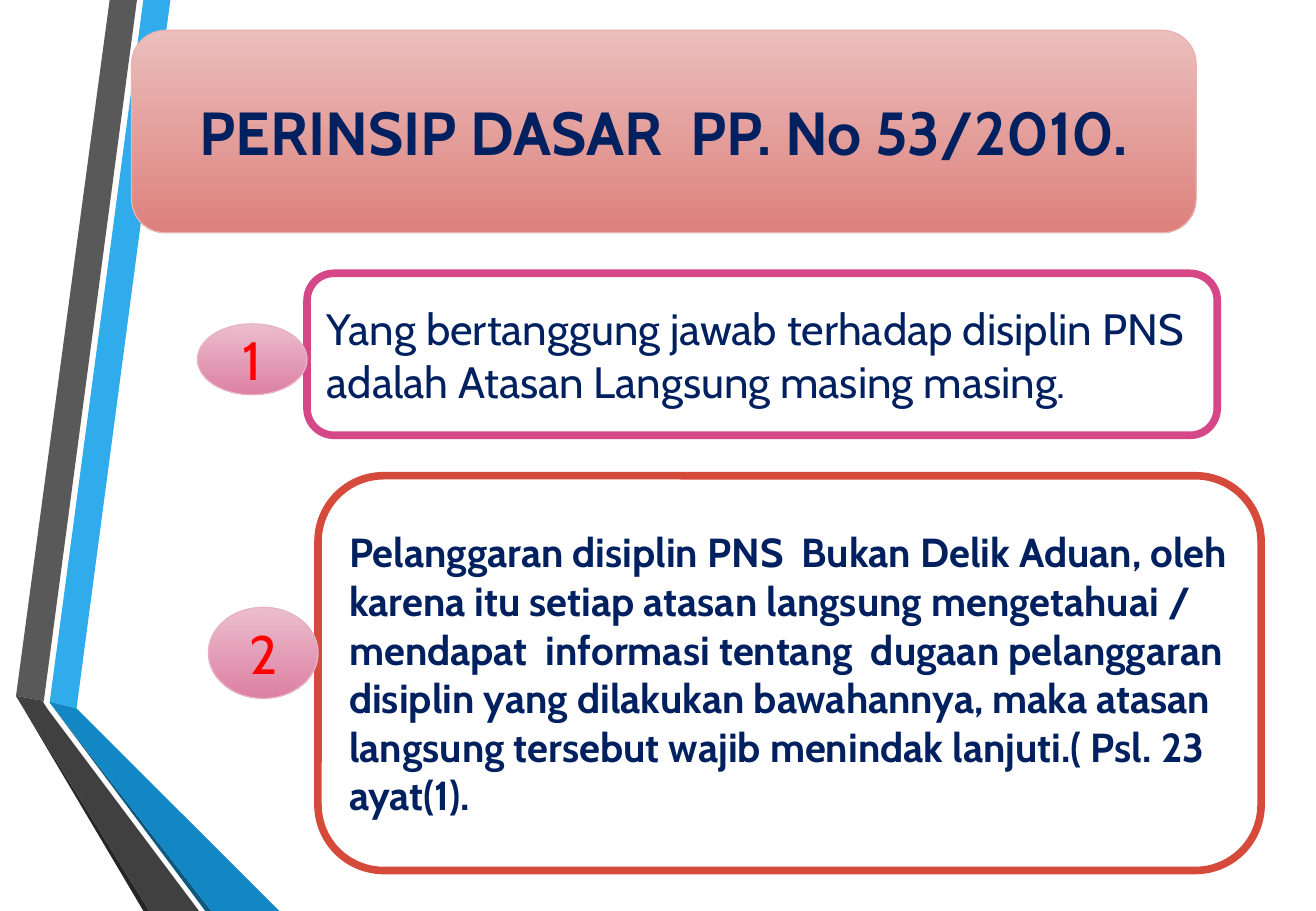
from dataclasses import dataclass

import pptx
import pptx.dml.color
import pptx.enum.shapes
import pptx.enum.text
import pptx.util

Pt = pptx.util.Pt
RGB = pptx.dml.color.RGBColor
Shape = pptx.enum.shapes.MSO_SHAPE
Align = pptx.enum.text.PP_ALIGN

WHITE = RGB(0xFF, 0xFF, 0xFF)
NAVY = RGB(0x00, 0x20, 0x60)
RED = RGB(0xFF, 0x00, 0x00)
BLUE = RGB(0x30, 0xAC, 0xEC)
BLUE_MID = RGB(0x12, 0x87, 0xC3)
BLUE_DARK = RGB(0x0C, 0x5A, 0x82)
GREY = RGB(0x59, 0x59, 0x59)
GREY_MID = RGB(0x40, 0x40, 0x40)
GREY_DARK = RGB(0x26, 0x26, 0x26)
BRICK = RGB(0xD6, 0x4A, 0x3B)
MAGENTA = RGB(0xD6, 0x47, 0x87)
SALMON_LIGHT = RGB(0xEB, 0xBE, 0xBC)
SALMON = RGB(0xDD, 0x81, 0x7C)
SALMON_LINE = RGB(0xE8, 0xB2, 0xAF)
PINK_LIGHT = RGB(0xEB, 0xBE, 0xCD)
PINK = RGB(0xDD, 0x80, 0xA2)
PINK_LINE = RGB(0xE8, 0xB1, 0xC3)
FONT = "Cabin"


@dataclass
class Ribbon:
    color: RGB
    points: list[tuple[float, float]]


@dataclass
class Box:
    text: str
    left: float
    top: float
    width: float
    height: float
    fill: tuple[RGB, ...]  # one colour is solid, two run from top to bottom
    line: RGB
    line_width: float
    size: float
    color: RGB = NAVY
    bold: bool = False
    align: Align = Align.CENTER
    kind: Shape = Shape.ROUNDED_RECTANGLE


RIBBONS = [
    Ribbon(BLUE, [(29.5, 416), (45.4, 420), (101, 0), (85, 0)]),
    Ribbon(GREY, [(81.2, 0), (65, 0), (9.5, 412.5), (26, 415.5)]),
    Ribbon(GREY_DARK, [(9.5, 412.5), (85, 540), (88.5, 540)]),
    Ribbon(BLUE_DARK, [(29.5, 416.5), (121.7, 540), (125.3, 540)]),
    Ribbon(BLUE_MID, [(29.5, 416.5), (125.3, 540), (165.6, 540),
                      (45.4, 420), (29.5, 416)]),
    Ribbon(GREY_MID, [(118, 540), (28, 420), (25.5, 416), (26, 415.5),
                      (9.5, 412.5), (88.5, 540)]),
]


def card(text: str, left: float, top: float, width: float, height: float,
         line: RGB, size: float, bold: bool = False) -> Box:
    return Box(text, left, top, width, height, (WHITE,), line, 4.5, size,
               bold=bold, align=Align.LEFT)


def badge(text: str, left: float, top: float, height: float) -> Box:
    return Box(text, left, top, 65, height, (PINK_LIGHT, PINK), PINK_LINE,
               0.75, 32, color=RED, kind=Shape.OVAL)


BOXES = [
    card("Pelanggaran disiplin PNS  Bukan Delik Aduan, oleh karena itu setiap "
         "atasan langsung mengetahuai / mendapat  informasi tentang  dugaan "
         "pelanggaran disiplin yang dilakukan bawahannya, maka atasan "
         "langsung tersebut wajib menindak lanjuti.( Psl. 23 ayat(1).",
         188.5, 282, 559, 234, BRICK, 24, bold=True),
    card("Yang bertanggung jawab terhadap disiplin PNS adalah Atasan Langsung "
         "masing masing.", 182, 162, 539.5, 96, MAGENTA, 26),
    Box("PERINSIP DASAR  PP. No 53/2010.", 78, 18, 631, 120,
        (SALMON_LIGHT, SALMON), SALMON_LINE, 0.75, 36, bold=True),
    badge("1", 117, 192, 42),
    badge("2", 123.5, 360, 54),
]


def draw_ribbon(s: pptx.slide.Slide, ribbon: Ribbon) -> None:
    start, *rest = [(Pt(x), Pt(y)) for x, y in ribbon.points]
    builder = s.shapes.build_freeform(*start)
    builder.add_line_segments(rest, close=True)
    sp = builder.convert_to_shape()
    sp.shadow.inherit = False
    sp.fill.solid()
    sp.fill.fore_color.rgb = ribbon.color
    sp.line.fill.background()


def draw_box(s: pptx.slide.Slide, box: Box) -> None:
    sp = s.shapes.add_shape(box.kind, Pt(box.left), Pt(box.top),
                            Pt(box.width), Pt(box.height))
    sp.shadow.inherit = False
    if len(box.fill) == 1:
        sp.fill.solid()
        sp.fill.fore_color.rgb = box.fill[0]
    else:
        sp.fill.gradient()
        sp.fill.gradient_angle = 270
        for position, (stop, color) in enumerate(
                zip(sp.fill.gradient_stops, box.fill)):
            stop.position = position
            stop.color.rgb = color
    sp.line.color.rgb = box.line
    sp.line.width = Pt(box.line_width)

    tf = sp.text_frame
    tf.word_wrap = True
    tf.vertical_anchor = pptx.enum.text.MSO_ANCHOR.MIDDLE
    p = tf.paragraphs[0]
    p.alignment = box.align
    r = p.add_run()
    r.text = box.text
    r.font.name = FONT
    r.font.size = Pt(box.size)
    r.font.bold = box.bold
    r.font.color.rgb = box.color


def main() -> None:
    prs = pptx.Presentation()
    prs.slide_width, prs.slide_height = Pt(780), Pt(540)
    s = prs.slides.add_slide(prs.slide_layouts[6])
    for ribbon in RIBBONS:
        draw_ribbon(s, ribbon)
    for box in BOXES:
        draw_box(s, box)
    prs.save("out.pptx")


if __name__ == "__main__":
    main()
